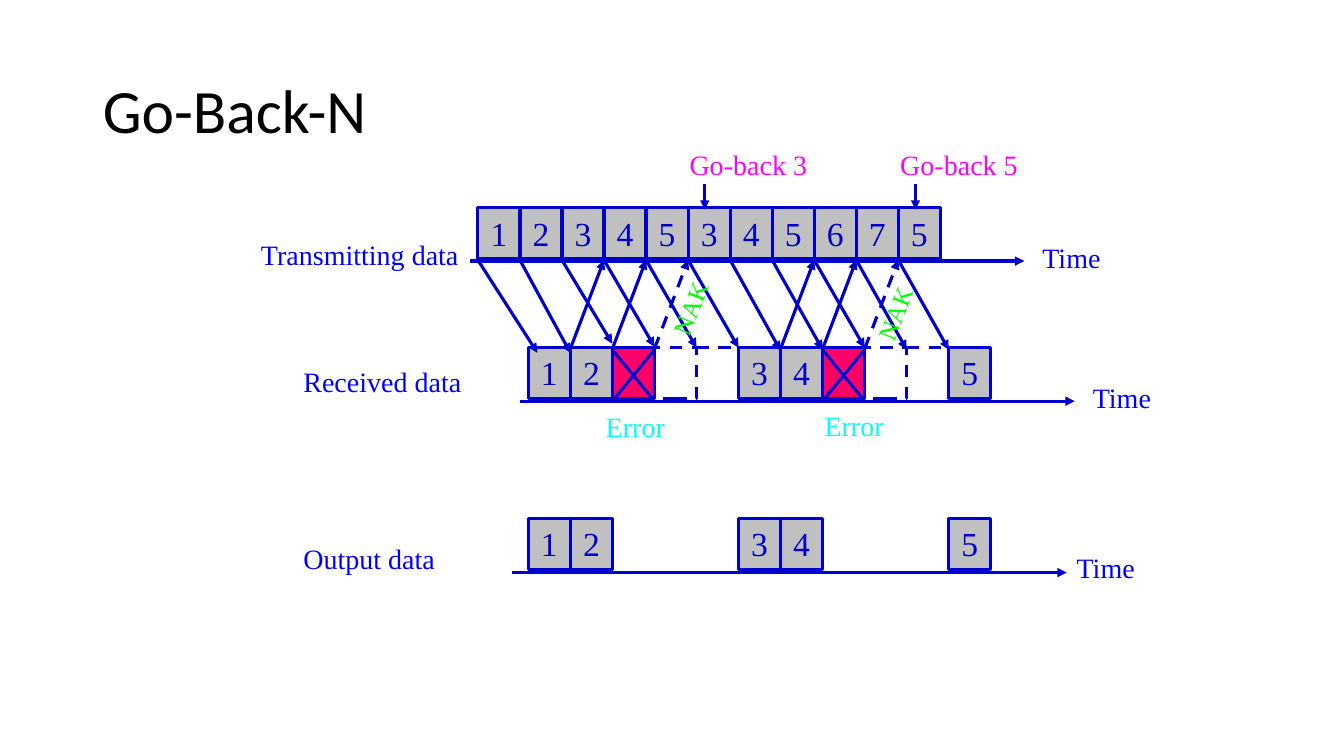
from lxml import etree
from pptx import Presentation
from pptx.dml.color import RGBColor
from pptx.enum import dml, shapes, text
from pptx.oxml.ns import qn
from pptx.util import Inches, Pt

NAVY, BLUE = RGBColor(0, 0, 0xCC), RGBColor(0, 0, 0xFF)
GRAY, RED = RGBColor(0xC0, 0xC0, 0xC0), RGBColor(0xFF, 0, 0x66)
CYAN, GREEN = RGBColor(0, 0xFF, 0xFF), RGBColor(0, 0xFF, 0)
MAGENTA, BLACK = RGBColor(0xFF, 0, 0xFF), RGBColor(0, 0, 0)
SERIF = "Times New Roman"

# Content: x is a damaged frame, ? a discarded one, - a dashed gap, . nothing
TITLE = "Go-Back-N"
TIMELINES = [  # frames, first column left, row top, axis start, axis y
    ("12345345675", 4.74, 2.06, 4.66, 2.59),
    ("12x?-34x?-5", 5.24, 3.445, 5.16, 3.98),
    ("12...34...5", 5.24, 5.14, 5.08, 5.68),
]
LABELS = [  # wording, left, top, width, colour
    ("Transmitting data", 2.49, 2.31, 2.33, BLUE),
    ("Received data", 2.91, 3.57, 2.08, BLUE),
    ("Output data", 2.91, 5.32, 2.08, BLUE),
    ("Time", 10.24, 2.34, 0.83, BLUE),
    ("Time", 10.74, 3.73, 0.83, BLUE),
    ("Time", 10.58, 5.41, 0.83, BLUE),
    ("Error", 5.91, 4.01, 1.08, CYAN),
    ("Error", 8.08, 4.0, 1.0, CYAN),
    ("Go-back 3", 6.74, 1.41, 1.58, MAGENTA),
    ("Go-back 5", 8.83, 1.41, 1.58, MAGENTA),
]
NAKS = [(6.44, 2.82, 0.83), (8.43, 2.81, 0.96)]
LANDINGS = [3.5, 3.5, 3.41, 3.44, 3.45, 3.45, 3.48, 3.47, 3.45, 3.47, 3.47]
REPLIES = {1: False, 2: False, 3: True, 6: False, 7: False, 8: True}  # True: NAK
GO_BACKS = [6.99, 9.08]

# Grid
COL, ROW = 0.417, 0.51
AXIS_LENGTH = 5.5
SENT_LEFT, RECEIVED_LEFT = TIMELINES[0][1], TIMELINES[1][1]
SENT_BASE, RECEIVED_TOP = 2.58, 3.46

deck = Presentation()
deck.slide_width, deck.slide_height = Inches(13.33), Inches(7.5)
slide = deck.slides.add_slide(deck.slide_layouts[5])


def write(frame, words, size, color, font=SERIF, **layout):
    settings = {"word_wrap": True, "vertical_anchor": text.MSO_ANCHOR.TOP, **layout}
    for key, value in settings.items():
        setattr(frame, key, value)
    paragraph = frame.paragraphs[0]
    run = paragraph.add_run()
    run.text = words
    for key, value in {"size": Pt(size), "name": font}.items():
        setattr(run.font, key, value)
    run.font.color.rgb = color
    return paragraph


def outline(line, dashed):
    line.color.rgb, line.width = NAVY, Pt(2.25)
    if dashed:
        line.dash_style = dml.MSO_LINE.DASH


def stroke(x1, y1, x2, y2, arrow=False, dashed=False):
    ends = [Inches(v) for v in (x1, y1, x2, y2)]
    link = slide.shapes.add_connector(shapes.MSO_CONNECTOR.STRAIGHT, *ends)
    outline(link.line, dashed)
    properties = link._element.spPr
    if arrow:
        etree.SubElement(properties.find(qn("a:ln")), qn("a:tailEnd"), type="triangle")
    etree.SubElement(properties, qn("a:effectLst"))


def label(words, left, top, width, color, size=20, turn=0):
    box = slide.shapes.add_textbox(*[Inches(v) for v in (left, top, width, size * 0.0215)])
    box.rotation = turn
    write(box.text_frame, words, size, color)


def frame_cell(mark, left, top):
    if mark == "-":
        stroke(left, top, left + COL, top, dashed=True)
        return
    cell = slide.shapes.add_shape(
        shapes.MSO_SHAPE.RECTANGLE, *[Inches(v) for v in (left, top, COL, ROW)])
    cell.shadow.inherit = False
    outline(cell.line, mark == "?")
    if mark == "?":
        cell.fill.background()
        return
    cell.fill.solid()
    cell.fill.fore_color.rgb = RED if mark == "x" else GRAY
    if mark != "x":
        digit = write(cell.text_frame, mark, 24, NAVY)
        digit.alignment = text.PP_ALIGN.CENTER


# Title
title = slide.shapes.title
for side, share in {"left": 0.92, "top": 0.4, "width": 11.5, "height": 1.45}.items():
    setattr(title, side, Inches(share))
heading = write(title.text_frame, TITLE, 44, BLACK, "Calibri",
                vertical_anchor=text.MSO_ANCHOR.MIDDLE)
heading.alignment, heading.line_spacing = text.PP_ALIGN.LEFT, 0.9

# Timelines with their frames
for marks, first, top, axis_left, axis_y in TIMELINES:
    stroke(axis_left, axis_y, axis_left + AXIS_LENGTH, axis_y, arrow=True)
    for col, mark in enumerate(marks):
        if mark != ".":
            frame_cell(mark, first + col * COL, top)

# Crosses on the damaged frames
for col, mark in enumerate(TIMELINES[1][0]):
    if mark == "x":
        left, right = (RECEIVED_LEFT + c * COL for c in (col, col + 1))
        stroke(left, 3.47, right, 3.98)
        stroke(right, 3.47, left, 3.98)

# Frames going down, replies coming back two columns later
for col, landing in enumerate(LANDINGS):
    drift = 0.09 if col == 0 else 0
    stroke(SENT_LEFT + col * COL, SENT_BASE,
           RECEIVED_LEFT + col * COL + drift, landing, arrow=True)
for col, is_nak in REPLIES.items():
    stroke(RECEIVED_LEFT + col * COL, RECEIVED_TOP,
           SENT_LEFT + (col + 2) * COL, SENT_BASE, arrow=True, dashed=is_nak)
for x in GO_BACKS:
    stroke(x, 1.83, x, 2.08, arrow=True)

# Labels
for entry in LABELS:
    label(*entry)
for left, top, width in NAKS:
    label("NAK", left, top, width, GREEN, size=18, turn=291.7)

deck.save("out.pptx")
